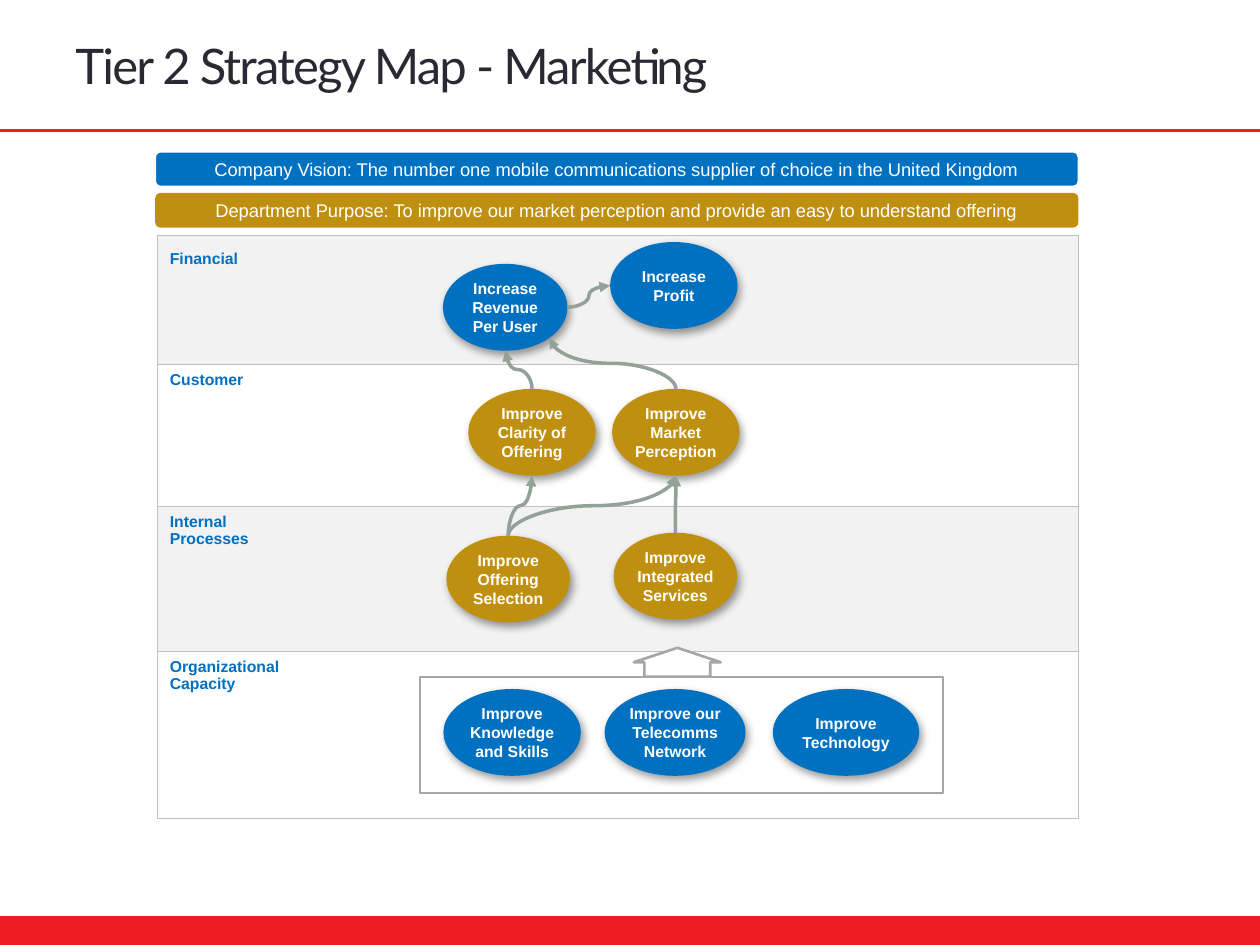
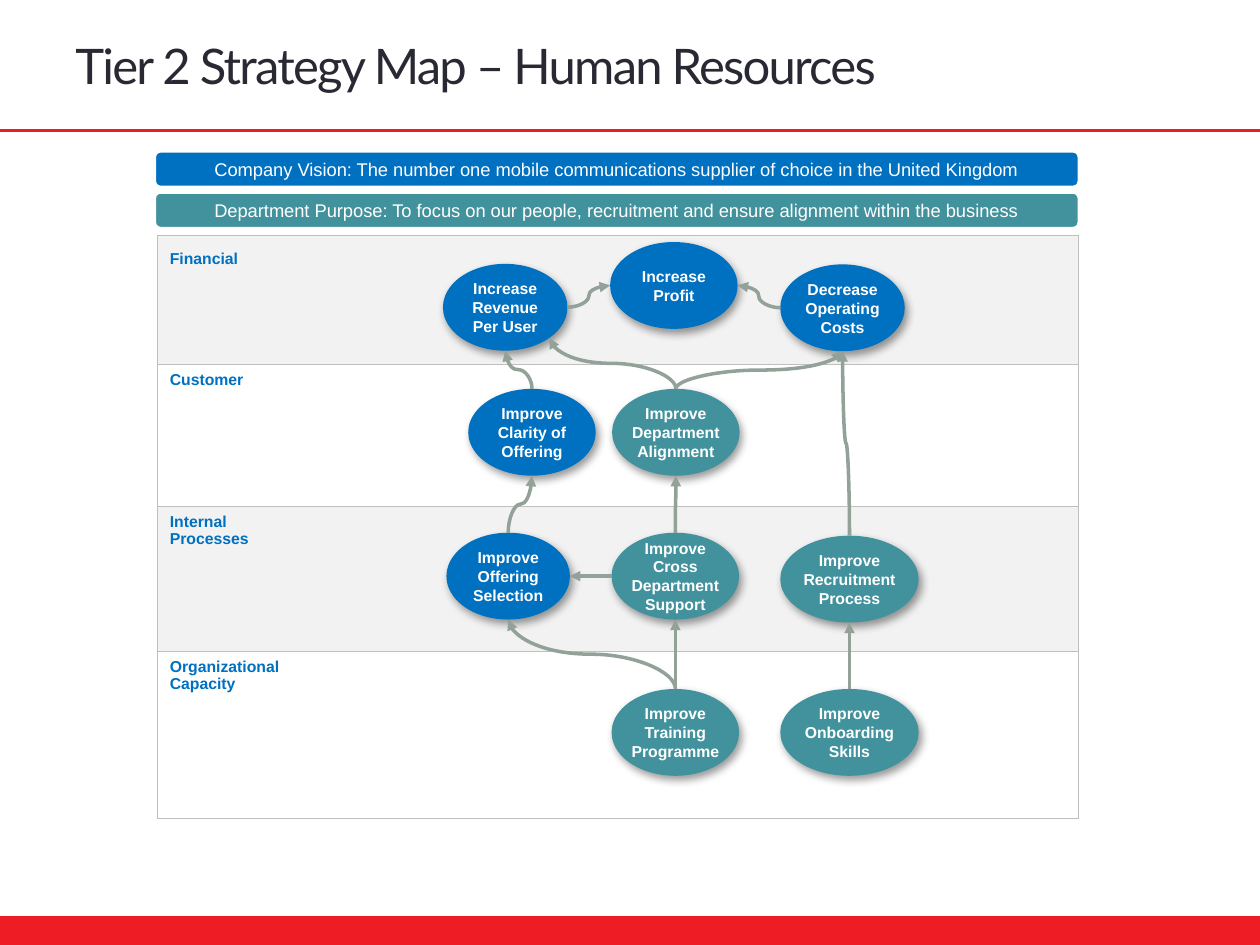
from dataclasses import dataclass
from math import sqrt

from lxml import etree
from pptx import Presentation
from pptx.dml.color import RGBColor
from pptx.enum.shapes import MSO_CONNECTOR, MSO_SHAPE
from pptx.enum.text import MSO_ANCHOR, PP_ALIGN
from pptx.oxml.ns import qn
from pptx.util import Cm, Pt

RECT, ROUNDED = MSO_SHAPE.RECTANGLE, MSO_SHAPE.ROUNDED_RECTANGLE
ELLIPSE, UP_ARROW = MSO_SHAPE.OVAL, MSO_SHAPE.UP_ARROW
STRAIGHT, CURVE = MSO_CONNECTOR.STRAIGHT, MSO_CONNECTOR.CURVE
CENTER, MIDDLE = PP_ALIGN.CENTER, MSO_ANCHOR.MIDDLE


@dataclass(frozen=True)
class Theme:
    red: str = "EE1C25"
    ink: str = "292934"
    blue: str = "0070C0"
    gold: str = "BF9010"
    teal: str = "42929D"
    white: str = "FFFFFF"
    shade: str = "F2F2F2"
    border: str = "BFBFBF"
    outline: str = "A6A6A6"
    link: str = "93A299"
    title_font: str = "Lato"
    body_font: str = "Arial"
    title_size: float = 28
    band_size: float = 10.5
    goal_size: float = 9


THEME = Theme()

VISION = ("Company Vision: The number one mobile communications supplier "
          "of choice in the United Kingdom")

# Perspective lines, row height, top margin (cm)
PERSPECTIVES = [
    (["Financial"], 2.6, 0.3),
    (["Customer"], 2.86, 0.13),
    (["Internal", "Processes"], 2.92, 0.13),
    (["Organizational", "Capacity"], 3.37, 0.13),
]

# Goal text, left, top, width (cm)
REVENUE = ("Increase Revenue Per User", 8.93, 5.32, 2.51)
PROFIT = ("Increase Profit", 12.3, 4.88, 2.57)
CLARITY = ("Improve Clarity of Offering", 9.44, 7.84, 2.57)
GOAL_HEIGHT = 1.75

MAPS = [
    {
        "title": "Tier 2 Strategy Map - Marketing",
        "purpose": "Department Purpose: To improve our market perception "
                   "and provide an easy to understand offering",
        "colour": THEME.gold,
        "purpose_outlined": False,
        "capacity_panel": True,
        "company_goals": {
            "revenue": REVENUE,
            "profit": PROFIT,
            "knowledge": ("Improve Knowledge and Skills", 8.94, 13.89, 2.77),
            "network": ("Improve our Telecomms Network", 12.19, 13.89, 2.84),
            "technology": ("Improve Technology", 15.58, 13.89, 2.95),
        },
        "department_goals": {
            "clarity": CLARITY,
            "perception": ("Improve Market Perception", 12.34, 7.84, 2.57),
            "selection": ("Improve Offering Selection", 9, 10.8, 2.49),
            "services": ("Improve Integrated Services", 12.37, 10.74, 2.49),
        },
        "links": [
            ("selection", "top", "clarity", "bottom"),
            ("selection", "top", "perception", "bottom"),
            ("services", "top", "perception", "bottom"),
            ("clarity", "top", "revenue", "bottom"),
            ("perception", "top", "revenue", "bottom right"),
            ("revenue", "right", "profit", "left"),
        ],
    },
    {
        "title": "Tier 2 Strategy Map – Human Resources",
        "purpose": "Department Purpose: To focus on our people, recruitment "
                   "and ensure alignment within the business",
        "colour": THEME.teal,
        "purpose_outlined": True,
        "capacity_panel": False,
        "company_goals": {
            "revenue": REVENUE,
            "profit": PROFIT,
            "costs": ("Decrease Operating Costs", 15.73, 5.33, 2.51),
            "clarity": CLARITY,
            "selection": ("Improve Offering Selection", 9, 10.74, 2.49),
        },
        "department_goals": {
            "alignment": ("Improve Department Alignment", 12.34, 7.84, 2.57),
            "support": ("Improve Cross Department Support", 12.33, 10.74, 2.57),
            "recruitment": ("Improve Recruitment Process", 15.73, 10.8, 2.79),
            "training": ("Improve Training Programme", 12.33, 13.89, 2.57),
            "onboarding": ("Improve Onboarding Skills", 15.73, 13.89, 2.79),
        },
        "links": [
            ("support", "top", "alignment", "bottom"),
            ("clarity", "top", "revenue", "bottom"),
            ("recruitment", "top", "costs", "bottom"),
            ("alignment", "top", "revenue", "bottom right"),
            ("alignment", "top", "costs", "bottom"),
            ("revenue", "right", "profit", "left"),
            ("costs", "left", "profit", "right"),
            ("onboarding", "top", "recruitment", "bottom"),
            ("support", "left", "selection", "right"),
            ("training", "top", "selection", "bottom"),
            ("training", "top", "support", "bottom"),
            ("selection", "top", "clarity", "bottom"),
        ],
    },
]

# Direction from the centre of a goal, as shares of its half width and height
SIDES = {
    "top": (0, -1),
    "bottom": (0, 1),
    "left": (-1, 0),
    "right": (1, 0),
    "bottom right": (sqrt(0.5), sqrt(0.5)),
}


def rgb(colour):
    return RGBColor.from_string(colour)


def add_span(para, text, size, colour, font=THEME.body_font, bold=False):
    span = para.add_run()
    span.text = text
    span.font.size = Pt(size)
    span.font.name = font
    span.font.bold = bold
    span.font.color.rgb = rgb(colour)
    return span


def add_box(page, kind, place, fill, outline=None, width=1.5):
    box = page.shapes.add_shape(kind, *(Cm(length) for length in place))
    box.shadow.inherit = False
    box.fill.solid()
    box.fill.fore_color.rgb = rgb(fill)
    if outline:
        box.line.color.rgb = rgb(outline)
        box.line.width = Pt(width)
    else:
        box.line.fill.background()
    return box


def add_centred_text(box, text, size, bold=False):
    frame = box.text_frame
    frame.word_wrap = True
    frame.vertical_anchor = MIDDLE
    para = frame.paragraphs[0]
    para.alignment = CENTER
    add_span(para, text, size, THEME.white, bold=bold)


def add_line(page, kind, start, end, colour, width):
    line = page.shapes.add_connector(kind, *(Cm(n) for n in (*start, *end)))
    line.line.color.rgb = rgb(colour)
    line.line.width = Pt(width)
    etree.SubElement(line._element.spPr, qn("a:effectLst"))
    return line


def add_frame(page, title):
    """Draw the title, red rule and footer that every page carries."""
    add_box(page, RECT, (0, 18.47, 25.4, 0.58), THEME.red)
    add_line(page, STRAIGHT, (0, 2.63), (25.4, 2.63), THEME.red, 1.5)
    box = page.shapes.add_textbox(Cm(1.27), Cm(0.4), Cm(17.63), Cm(1.83))
    frame = box.text_frame
    frame.word_wrap = True
    frame.vertical_anchor = MIDDLE
    frame.margin_top = frame.margin_bottom = 0
    span = add_span(frame.paragraphs[0], title, THEME.title_size, THEME.ink,
                    THEME.title_font)
    span.font._element.set("spc", "-100")


def add_band(page, text, top, fill, outline):
    band = add_box(page, ROUNDED, (3.13, top, 18.61, 0.7), fill, outline, 1)
    band.adjustments[0] = 0.15
    add_centred_text(band, text, THEME.band_size)


def add_borders(cell):
    for side in ("a:lnL", "a:lnR", "a:lnT", "a:lnB"):
        border = etree.SubElement(cell._tc.get_or_add_tcPr(), qn(side),
                                  w=str(Pt(0.5)))
        fill = etree.SubElement(border, qn("a:solidFill"))
        etree.SubElement(fill, qn("a:srgbClr"), val=THEME.border)


def add_perspectives(page):
    height = sum(row_height for _, row_height, _ in PERSPECTIVES)
    table = page.shapes.add_table(len(PERSPECTIVES), 1, Cm(3.17), Cm(4.75),
                                  Cm(18.57), Cm(height)).table
    table.first_row = table.horz_banding = False
    for index, (lines, row_height, margin) in enumerate(PERSPECTIVES):
        table.rows[index].height = Cm(row_height)
        cell = table.cell(index, 0)
        cell.margin_top = Cm(margin)
        add_borders(cell)
        cell.fill.solid()
        cell.fill.fore_color.rgb = rgb((THEME.shade, THEME.white)[index % 2])
        para = cell.text_frame.paragraphs[0]
        for number, text in enumerate(lines):
            if number:
                para.add_line_break()
            add_span(para, text, THEME.goal_size, THEME.blue, bold=True)


def add_capacity_panel(page):
    add_box(page, RECT, (8.47, 13.65, 10.54, 2.34), THEME.white, THEME.outline)
    arrow = add_box(page, UP_ARROW, (12.78, 13.06, 1.75, 0.58), THEME.white,
                    THEME.outline)
    arrow.adjustments[0] = 0.76


def add_goal(page, goal, fill):
    text, left, top, width = goal
    box = add_box(page, ELLIPSE, (left, top, width, GOAL_HEIGHT), fill)
    frame = box.text_frame
    frame.margin_left = frame.margin_right = 0
    frame.margin_top = frame.margin_bottom = 0
    add_centred_text(box, text, THEME.goal_size, bold=True)
    effects = box._element.spPr.find(qn("a:effectLst"))
    shadow = etree.SubElement(effects, qn("a:outerShdw"), blurRad=str(Pt(5)),
                              dist=str(Pt(3)), dir=str(60 * 60000))
    colour = etree.SubElement(shadow, qn("a:srgbClr"), val="000000")
    etree.SubElement(colour, qn("a:alpha"), val="40000")


def goal_point(goal, side):
    _, left, top, width = goal
    across, down = SIDES[side]
    return (left + width / 2 * (1 + across), top + GOAL_HEIGHT / 2 * (1 + down))


def add_link(page, source, source_side, target, target_side):
    """Draw a curved arrow; one leaving a top is laid flat, then turned."""
    start = goal_point(source, source_side)
    end = goal_point(target, target_side)
    upward = source_side == "top"
    if upward:
        middle_x, middle_y = ((a + b) / 2 for a, b in zip(start, end))
        half_run, half_rise = (start[1] - end[1]) / 2, (end[0] - start[0]) / 2
        start = (middle_x - half_run, middle_y - half_rise)
        end = (middle_x + half_run, middle_y + half_rise)
    link = add_line(page, CURVE, start, end, THEME.link, 2)
    if upward:
        link._element.spPr.find(qn("a:xfrm")).set("rot", str(270 * 60000))
    etree.SubElement(link.line._get_or_add_ln(), qn("a:tailEnd"),
                     type="triangle")


def add_map(page, content):
    add_frame(page, content["title"])
    add_perspectives(page)
    if content["capacity_panel"]:
        add_capacity_panel(page)
    add_band(page, VISION, 3.06, THEME.blue, THEME.white)
    add_band(page, content["purpose"], 3.89, content["colour"],
             THEME.white if content["purpose_outlined"] else None)
    for goal in content["company_goals"].values():
        add_goal(page, goal, THEME.blue)
    for goal in content["department_goals"].values():
        add_goal(page, goal, content["colour"])
    goals = {**content["company_goals"], **content["department_goals"]}
    for source, source_side, target, target_side in content["links"]:
        add_link(page, goals[source], source_side, goals[target], target_side)


def main():
    deck = Presentation()
    deck.slide_width, deck.slide_height = Cm(25.4), Cm(19.05)
    for content in MAPS:
        add_map(deck.slides.add_slide(deck.slide_layouts[6]), content)
    deck.save("out.pptx")


if __name__ == "__main__":
    main()
